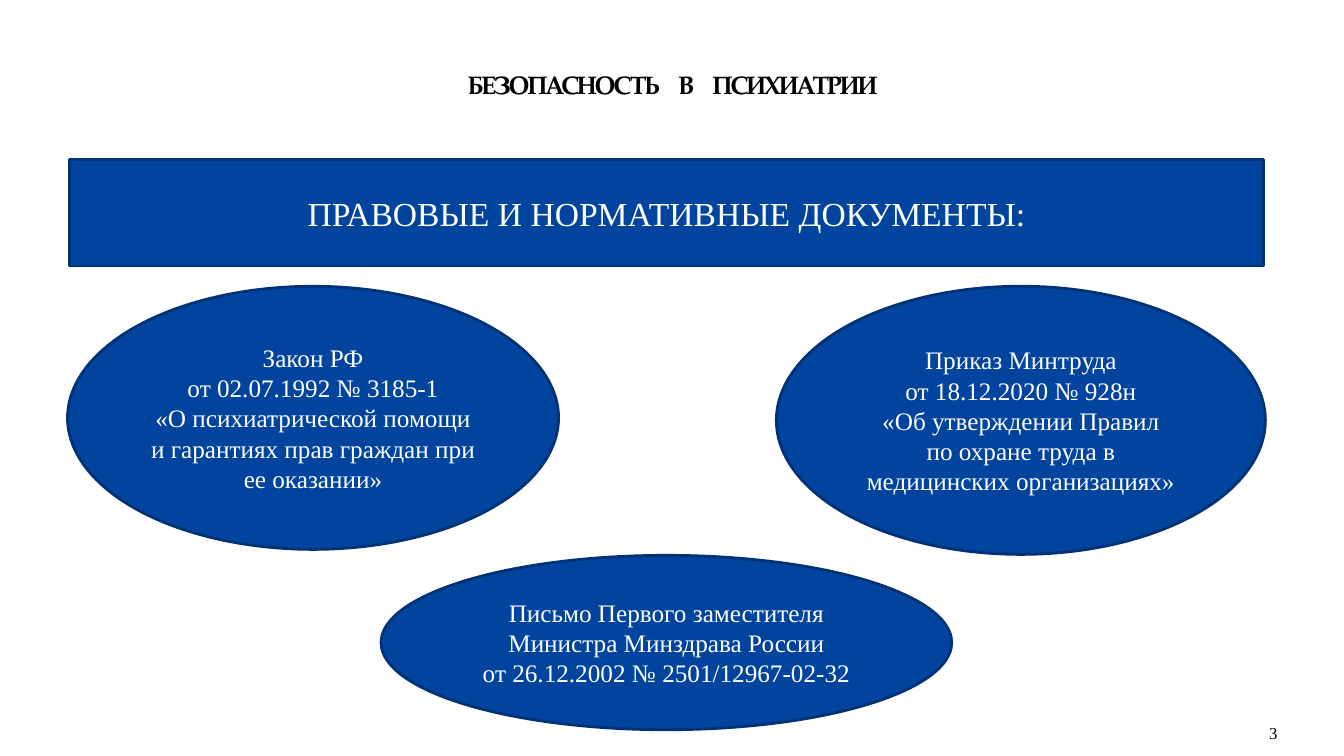
import pptx
import pptx.util
import pptx.dml.color
import pptx.enum.shapes
import pptx.enum.text
from dataclasses import dataclass

PX = 9144
SHAPE = pptx.enum.shapes.MSO_SHAPE
ALIGN = pptx.enum.text.PP_ALIGN
ANCHOR = pptx.enum.text.MSO_ANCHOR


@dataclass(frozen=True)
class Theme:
    fill: str = "00449E"
    line: str = "003275"
    light: str = "FFFFFF"
    dark: str = "000000"
    body_font: str = "Times New Roman"
    title_font: str = "TeX Gyre Pagella"
    banner_size: int = 24
    body_size: int = 18
    number_size: int = 12
    line_width: int = 2


THEME = Theme()


def rgb(value):
    return pptx.dml.color.RGBColor.from_string(value)


def emu(box):
    return [pptx.util.Emu(v * PX) for v in box]


def add_run(p, text, size, color, font, bold, spacing):
    r = p.add_run()
    r.text = text
    r.font.size = pptx.util.Pt(size)
    r.font.name = font
    r.font.bold = bold
    r.font.color.rgb = rgb(color)
    if spacing:
        r._r.get_or_add_rPr().set("spc", str(spacing))


def write(tf, text, size=THEME.body_size, color=THEME.light, font=THEME.body_font,
          bold=False, align=ALIGN.CENTER, anchor=ANCHOR.MIDDLE, spacing=0, word_gap=0):
    tf.word_wrap = True
    tf.vertical_anchor = anchor
    for i, line in enumerate(text.split("\n")):
        p = tf.paragraphs[0] if i == 0 else tf.add_paragraph()
        p.alignment = align
        if not word_gap:
            add_run(p, line, size, color, font, bold, spacing)
            continue
        for j, word in enumerate(line.split()):
            if j:
                add_run(p, " ", size, color, font, bold, word_gap)
            add_run(p, word, size, color, font, bold, spacing)


def add_panel(slide, kind, box, text, **text_format):
    sp = slide.shapes.add_shape(kind, *emu(box))
    sp.shadow.inherit = False
    sp.fill.solid()
    sp.fill.fore_color.rgb = rgb(THEME.fill)
    sp.line.color.rgb = rgb(THEME.line)
    sp.line.width = pptx.util.Pt(THEME.line_width)
    write(sp.text_frame, text, **text_format)


def add_title(slide, box, text):
    title = slide.shapes.title
    title.left, title.top, title.width, title.height = emu(box)
    write(title.text_frame, text, color=THEME.dark, font=THEME.title_font,
          bold=True, spacing=-100, word_gap=900)


def add_banner(slide, box, text):
    add_panel(slide, SHAPE.RECTANGLE, box, text, size=THEME.banner_size)


def add_documents(slide, box, documents):
    left, top, _, _ = box
    for (x, y, width, height), text in documents:
        add_panel(slide, SHAPE.OVAL, (left + x, top + y, width, height), text)


def add_page_number(slide, box, text):
    tf = slide.shapes.add_textbox(*emu(box)).text_frame
    tf.margin_left = tf.margin_right = 0
    write(tf, text, size=THEME.number_size, color=THEME.dark,
          align=ALIGN.RIGHT, anchor=ANCHOR.BOTTOM)


def main():
    prs = pptx.Presentation()
    prs.slide_width, prs.slide_height = emu((1333, 750))
    slide = prs.slides.add_slide(prs.slide_layouts.get_by_name("Title Only"))
    add_title(slide, (67, 64, 1200, 40), "БЕЗОПАСНОСТЬ В ПСИХИАТРИИ")
    add_banner(slide, (69, 158, 1184, 106), "ПРАВОВЫЕ И НОРМАТИВНЫЕ ДОКУМЕНТЫ:")
    add_documents(slide, (67, 284, 1188, 440), [
        ((0, 0, 487, 261),
         "Закон РФ\nот 02.07.1992 № 3185-1\n"
         "«О психиатрической помощи и гарантиях прав граждан при ее оказании»"),
        ((703, 0, 485, 266),
         "Приказ Минтруда\nот 18.12.2020 № 928н\n«Об утверждении Правил\n"
         "по охране труда в\nмедицинских организациях»"),
        ((311, 267, 566, 173),
         "Письмо Первого заместителя Министра Минздрава России\n"
         "от 26.12.2002 № 2501/12967-02-32"),
    ])
    add_page_number(slide, (1156, 702, 111, 40), "3")
    prs.save("out.pptx")


if __name__ == "__main__":
    main()
